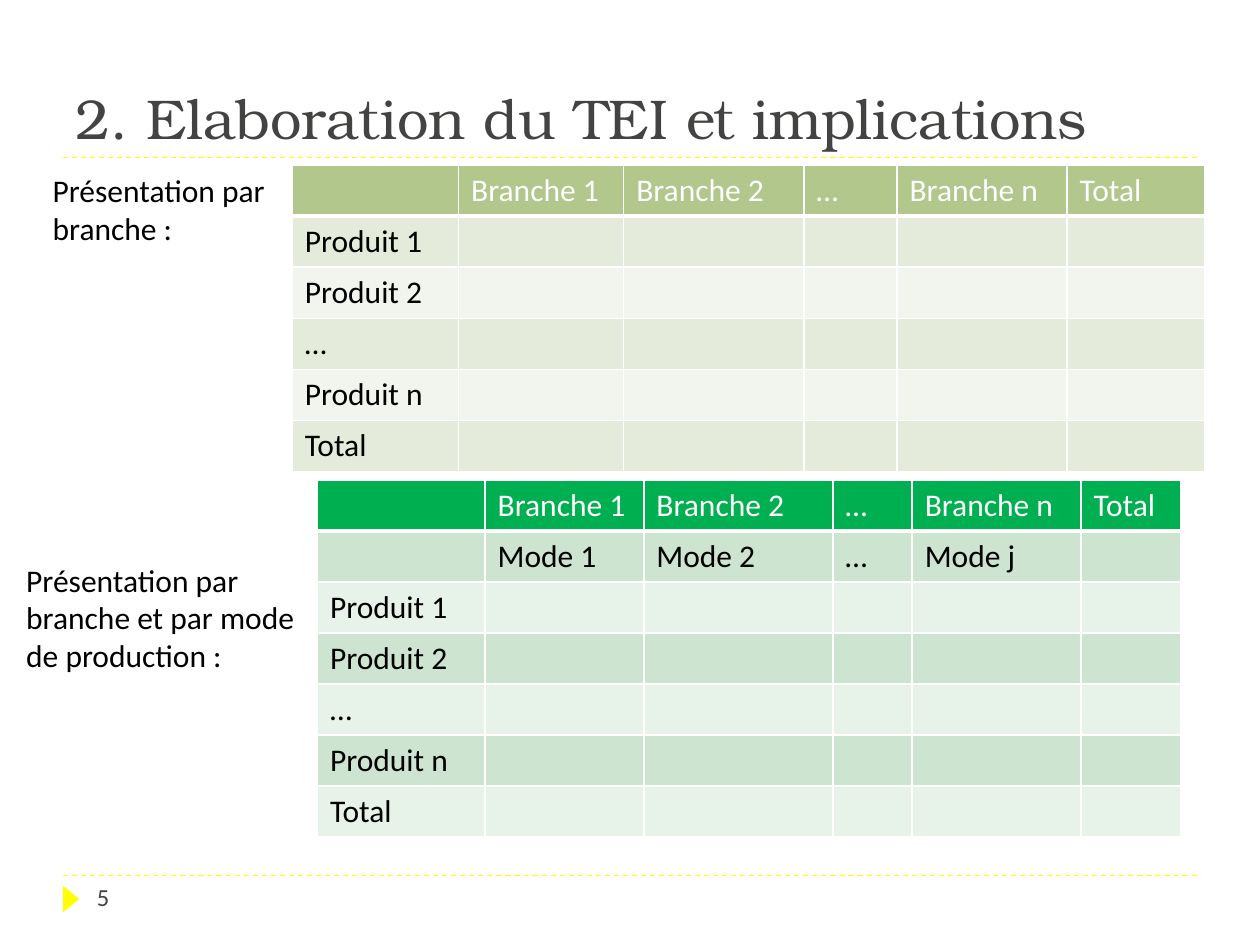
from lxml.etree import SubElement
from pptx import Presentation
from pptx.dml.color import RGBColor
from pptx.enum.dml import MSO_LINE_DASH_STYLE as Dash
from pptx.enum.shapes import MSO_CONNECTOR as Connector, MSO_SHAPE as Shape
from pptx.enum.text import MSO_ANCHOR as Anchor, MSO_AUTO_SIZE as AutoSize, PP_ALIGN as Align
from pptx.oxml.ns import qn
from pptx.util import Inches, Pt

COLORS = {
    "accent": "FFFF00", "title": "434342", "text": "000000", "white": "FFFFFF",
    "olive": "B2C78C", "olive_mid": "E4EBDA", "olive_pale": "F2F5EE",
    "green": "00B050", "green_mid": "CCE4D0", "green_pale": "E7F2E9",
}
BODY_FONT, TITLE_FONT = "Calibri", "TeX Gyre Bonum"
CELL_SIZE = 16


def rgb(name):
    return RGBColor.from_string(COLORS[name])


class SlideBuilder:
    def __init__(self, slide):
        self.slide = slide
        self.shapes = slide.shapes

    def style(self, paragraph, size, color="text", font=BODY_FONT, bold=False):
        paragraph.font.name = font
        paragraph.font.size = Pt(size)
        paragraph.font.bold = bold
        paragraph.font.color.rgb = rgb(color)

    def title(self, text, left, top, width, height):
        title = self.shapes.title
        title.left, title.top = Inches(left), Inches(top)
        title.width, title.height = Inches(width), Inches(height)
        frame = title.text_frame
        frame.text = text
        frame.auto_size = AutoSize.NONE
        frame.vertical_anchor = Anchor.BOTTOM
        frame.paragraphs[0].alignment = Align.LEFT
        self.style(frame.paragraphs[0], 32, "title", TITLE_FONT)

    def rule(self, y):
        line = self.shapes.add_connector(
            Connector.STRAIGHT, Inches(0.5), Inches(y), Inches(9.5), Inches(y))
        line.line.color.rgb = rgb("accent")
        line.line.width = Pt(0.75)
        line.line.dash_style = Dash.DASH
        SubElement(line._element.spPr, qn("a:effectLst"))

    def marker(self, left, top, width, height):
        marker = self.shapes.add_shape(
            Shape.ISOSCELES_TRIANGLE, Inches(left), Inches(top), Inches(width), Inches(height))
        marker.rotation = 90
        marker.shadow.inherit = False
        marker.fill.solid()
        marker.fill.fore_color.rgb = rgb("accent")
        marker.line.fill.background()

    def label(self, text, left, top, width, height, size=18, color="text"):
        box = self.shapes.add_textbox(Inches(left), Inches(top), Inches(width), Inches(height))
        box.text_frame.word_wrap = True
        box.text_frame.text = text
        self.style(box.text_frame.paragraphs[0], size, color)

    def borders(self, cell, bottom):
        properties = cell._tc.get_or_add_tcPr()
        for side, points in (("L", 1), ("R", 1), ("T", 1), ("B", bottom)):
            edge = SubElement(properties, qn(f"a:ln{side}"), w=str(Pt(points)))
            fill = SubElement(edge, qn("a:solidFill"))
            SubElement(fill, qn("a:srgbClr"), val=COLORS["white"])

    def table(self, rows, left, top, widths, row_height, palette):
        grid = self.shapes.add_table(
            len(rows), len(widths), Inches(left), Inches(top),
            Inches(sum(widths)), Inches(row_height * len(rows))).table
        for column, width in zip(grid.columns, widths):
            column.width = Inches(width)
        for r, texts in enumerate(rows):
            header = r == 0
            fill = palette if header else f"{palette}_{'mid' if r % 2 else 'pale'}"
            grid.rows[r].height = Inches(row_height)
            for c in range(len(widths)):
                cell = grid.cell(r, c)
                self.borders(cell, 3 if header else 1)
                cell.fill.solid()
                cell.fill.fore_color.rgb = rgb(fill)
                paragraph = cell.text_frame.paragraphs[0]
                if c < len(texts) and texts[c]:
                    cell.text = texts[c]
                    self.style(paragraph, CELL_SIZE, "white" if header else "text", bold=header)
                else:
                    paragraph._p.get_or_add_endParaRPr().set("sz", str(CELL_SIZE * 100))


def main():
    deck = Presentation()
    deck.slide_width, deck.slide_height = Inches(10), Inches(7.5)
    page = SlideBuilder(deck.slides.add_slide(deck.slide_layouts[5]))

    branches = ["", "Branche 1", "Branche 2", "…", "Branche n", "Total"]
    modes = ["", "Mode 1", "Mode 2", "…", "Mode j"]
    products = [[name] for name in ("Produit 1", "Produit 2", "…", "Produit n", "Total")]

    for y in (6.95, 1.25):
        page.rule(y)
    page.marker(0.46, 7.07, 0.21, 0.13)
    page.title("2. Elaboration du TEI et implications", 0.5, 0.17, 9, 1.08)
    page.table([branches, *products], 2.32, 1.31,
               [1.32, 1.31, 1.43, 0.74, 1.35, 1.09], 0.37, "olive")
    page.label("5", 0.67, 6.95, 2.17, 0.4, 14, "title")
    page.label("Présentation par branche :", 0.32, 1.31, 2.37, 0.71)
    page.table([branches, modes, *products], 2.52, 3.81,
               [1.33, 1.26, 1.5, 0.63, 1.34, 0.79], 0.405, "green")
    page.label("Présentation par branche et par mode de production :", 0.11, 4.4, 2.62, 1.01)

    deck.save("out.pptx")


if __name__ == "__main__":
    main()
